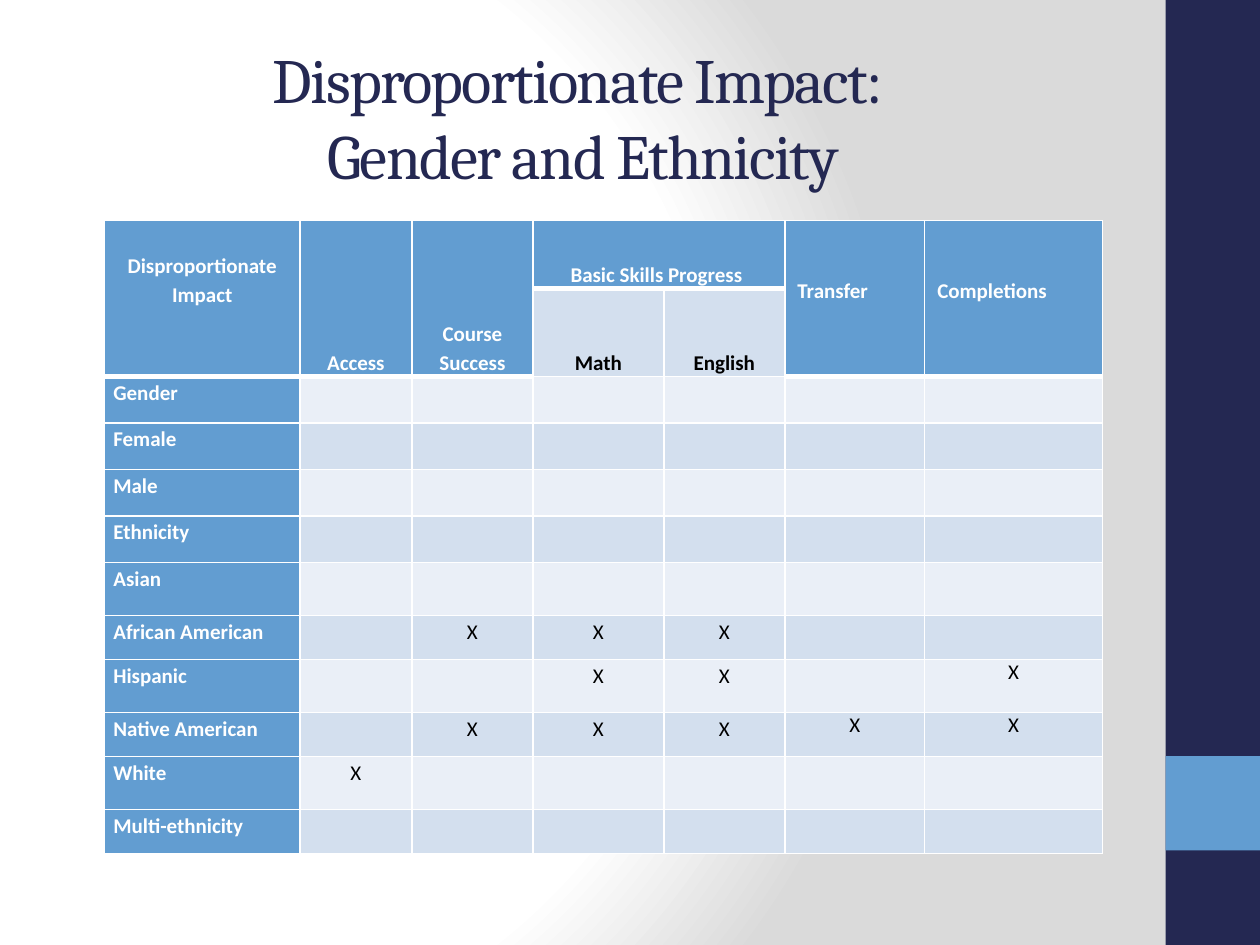
from dataclasses import dataclass

from pptx import Presentation, oxml
from pptx import util as u
from pptx.dml.color import RGBColor
from pptx.enum import shapes, text
from pptx.oxml import ns


@dataclass(frozen=True)
class Theme:
    navy: str = "242852"
    blue: str = "629DD1"
    band: str = "D3DFEE"
    pale: str = "EAEFF7"
    white: str = "FFFFFF"
    gray: str = "DADADA"
    black: str = "000000"
    serif: str = "Cambria"
    sans: str = "Calibri"
    head: int = 36
    body: int = 12
    thin: int = 1
    thick: int = 3


MID = text.PP_ALIGN.CENTER
LEFT = text.PP_ALIGN.LEFT
LOW = text.MSO_ANCHOR.BOTTOM
TOP = text.MSO_ANCHOR.TOP

COLS = [1.55, 0.89, 0.96, 1.04, 0.96, 1.11, 1.41]
ROWS = [0.54, 0.36] + [0.37] * 4 + [0.42, 0.35] * 3
SKILLS = (3, 4)  # columns under the shared heading

# Group name and the columns marked with an X
GROUPS = [
    ("Gender", ()),
    ("Female", ()),
    ("Male", ()),
    ("Ethnicity", ()),
    ("Asian", ()),
    ("African American", (2, 3, 4)),
    ("Hispanic", (3, 4, 6)),
    ("Native American", (2, 3, 4, 5, 6)),
    ("White", (1,)),
    ("Multi-ethnicity", ()),
]


class Deck:
    def __init__(self, theme, slide):
        self.theme = theme
        self.slide = slide

    def font(self, para, size, name, color, bold=False):
        font = para.font
        font.size, font.name, font.bold = u.Pt(size), name, bold
        font.color.rgb = RGBColor.from_string(color)

    def back(self):
        """Radial gradient from the left part of the slide."""
        t = self.theme
        self.slide.background.fill.gradient()
        old = self.slide.element.find(".//" + ns.qn("a:gradFill"))
        stops = "".join(
            f'<a:gs pos="{pos * 1000}"><a:srgbClr val="{color}"/></a:gs>'
            for pos, color in [(0, t.white), (75, t.white), (100, t.gray)])
        new = oxml.parse_xml(
            f'<a:gradFill {ns.nsdecls("a")} rotWithShape="1">'
            f'<a:gsLst>{stops}</a:gsLst><a:path path="circle">'
            '<a:fillToRect l="20000" t="50000" r="100000" b="50000"/>'
            '</a:path></a:gradFill>')
        old.getparent().replace(old, new)

    def block(self, left, top, width, height, color):
        box = self.slide.shapes.add_shape(
            shapes.MSO_SHAPE.RECTANGLE,
            *map(u.Inches, (left, top, width, height)))
        box.shadow.inherit = False
        box.fill.solid()
        box.fill.fore_color.rgb = RGBColor.from_string(color)
        box.line.fill.background()

    def title(self, words, left, top, width, height):
        t = self.theme
        box = self.slide.shapes.title
        box.left, box.top, box.width, box.height = map(
            u.Inches, (left, top, width, height))
        frame = box.text_frame
        frame.text = words
        frame.word_wrap = True
        frame.vertical_anchor = text.MSO_ANCHOR.MIDDLE
        para = frame.paragraphs[0]
        para.alignment = MID
        self.font(para, t.head, t.serif, t.navy)
        for run in para.runs:
            run._r.get_or_add_rPr().set("spc", "-100")

    def grid(self, left, top, cols, rows):
        table = self.slide.shapes.add_table(
            len(rows), len(cols),
            *map(u.Inches, (left, top, sum(cols), sum(rows)))).table
        table.horz_banding = False
        for col, width in zip(table.columns, cols):
            col.width = u.Inches(width)
        for row, height in zip(table.rows, rows):
            row.height = u.Inches(height)
        return table

    def edge(self, cell, top, low):
        """White borders, with the top and bottom widths given."""
        t = self.theme
        props = cell._tc.get_or_add_tcPr()
        widths = {"L": t.thin, "R": t.thin, "T": top, "B": low}
        for side, width in widths.items():
            props.append(oxml.parse_xml(
                f'<a:ln{side} {ns.nsdecls("a")} w="{u.Pt(width)}">'
                f'<a:solidFill><a:srgbClr val="{t.white}"/></a:solidFill>'
                f'</a:ln{side}>'))

    def paint(self, cell, color):
        cell.fill.solid()
        cell.fill.fore_color.rgb = RGBColor.from_string(color)
        cell.margin_left = cell.margin_right = u.Inches(0.07)
        cell.margin_top = cell.margin_bottom = 0
        cell.text_frame.paragraphs[0].font.size = u.Pt(self.theme.body)

    def label(self, cell, words, color, bold=True, align=MID, anchor=TOP,
              space=1.15):
        cell.text = words
        cell.vertical_anchor = anchor
        para = cell.text_frame.paragraphs[0]
        para.alignment = align
        para.line_spacing = space
        self.font(para, self.theme.body, self.theme.sans, color, bold)


def fill_table(deck):
    t = deck.theme
    table = deck.grid(0.83, 1.75, COLS, ROWS)

    # Borders and fills: heading cells, first column, banded body
    def rule(r, c):
        heavy = r == 0 or (r == 1 and c not in SKILLS)
        return t.thick if heavy else t.thin

    for r in range(len(ROWS)):
        for c in range(len(COLS)):
            cell = table.cell(r, c)
            deck.edge(cell, rule(r - 1, c) if r else t.thin, rule(r, c))
            head = c == 0 or r == 0 or (r == 1 and c not in SKILLS)
            deck.paint(cell, t.blue if head else t.band if r % 2 else t.pale)

    # Headings
    for c in range(len(COLS)):
        if c not in SKILLS:
            table.cell(0, c).merge(table.cell(1, c))
    table.cell(0, SKILLS[0]).merge(table.cell(0, SKILLS[1]))

    corner = table.cell(0, 0)
    deck.label(corner, "Disproportionate Impact", t.white)
    corner.margin_top = u.Inches(0.23)
    for c, words in enumerate(
            ["Access", "Course Success", "Basic Skills Progress "], 1):
        deck.label(table.cell(0, c), words, t.white, anchor=LOW)
    for c, words in zip(SKILLS, ["Math", "English"]):
        deck.label(table.cell(1, c), words, t.black, anchor=LOW)
    for c, words in enumerate(["Transfer", "Completions"], 5):
        cell = table.cell(0, c)
        deck.label(cell, words, t.white, align=LEFT, space=1.0)
        cell.margin_left = cell.margin_right = u.Inches(0.1)
        cell.margin_top = u.Inches(0.46)

    # Groups and marks
    for r, (name, marks) in enumerate(GROUPS, 2):
        deck.label(table.cell(r, 0), name, t.white, align=LEFT)
        for c in marks:
            deck.label(table.cell(r, c), "X", t.black, bold=False,
                       space=1.0 if c > SKILLS[1] else 1.15)


def main():
    show = Presentation()
    show.slide_width, show.slide_height = u.Inches(10), u.Inches(7.5)
    deck = Deck(Theme(), show.slides.add_slide(show.slide_layouts[5]))

    # Background and side band
    deck.back()
    deck.block(9.25, 0, 0.75, 7.5, deck.theme.navy)
    deck.block(9.25, 6, 0.75, 0.75, deck.theme.blue)

    # Content
    fill_table(deck)
    deck.title("Disproportionate Impact: \vGender and Ethnicity",
               0.42, 0.3, 8.42, 1.25)
    show.save("out.pptx")


if __name__ == "__main__":
    main()
